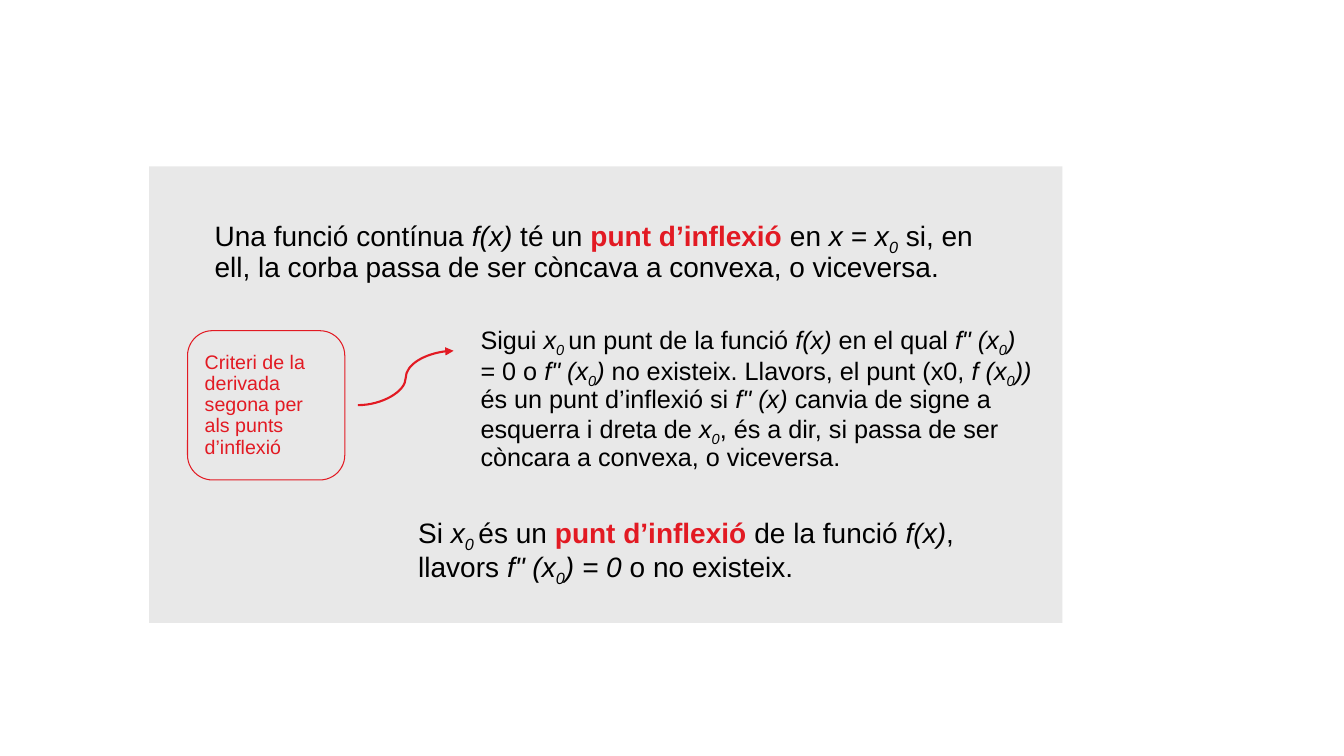
from lxml.etree import SubElement as Sub
from pptx import Presentation as Deck
from pptx.dml.color import RGBColor as Rgb
from pptx.enum.shapes import MSO_CONNECTOR as Link, MSO_SHAPE as Form
from pptx.enum.text import MSO_ANCHOR as Anchor, PP_ALIGN as Align
from pptx.oxml.ns import qn
from pptx.util import Pt

COLORS = {"panel": "E5E5E5", "red": "E21A23", "ink": "000000"}
FONT = "Arial"

RULE = [
    ("Una funció contínua ", ""), ("f(x)", "i"), (" té un ", ""),
    ("punt d’inflexió ", "key"), ("en ", ""), ("x = x", "i"), ("0", "sub"),
    (" si, en ell, la corba passa de ser còncava a convexa, o viceversa.", ""),
]
TEST = [
    ("Sigui ", ""), ("x", "i"), ("0 ", "sub"), ("un punt de la funció ", ""),
    ("f(x)", "i"), (" en el qual ", ""), ('f" (x', "i"), ("0", "sub"),
    (") ", "i"), ("= 0 o ", ""), ('f" (x', "i"), ("0", "sub"), (") ", "i"),
    ("no existeix. Llavors, el punt (x0, ", ""), ("f (x", "i"), ("0", "sub"),
    (")) ", "i"), ("és un punt d’inflexió si ", ""), ('f" (x) ', "i"),
    ("canvia de signe a esquerra i dreta de ", ""), ("x", "i"), ("0", "sub"),
    (", és a dir, si passa de ser còncara a convexa, o viceversa.", ""),
]
RESULT = [
    ("Si ", ""), ("x", "i"), ("0 ", "sub"), ("és un ", ""),
    ("punt d’inflexió ", "key"), ("de la funció ", ""), ("f(x)", "i"),
    (", llavors ", ""), ('f" (x', "i"), ("0", "sub"), (") = 0 ", "i"),
    ("o no existeix.", ""),
]
LABEL = [("Criteri de la derivada segona per als punts d’inflexió", "red")]


def color(name):
    return Rgb.from_string(COLORS[name])


def write(frame, parts, size):
    frame.word_wrap = True
    para = frame.paragraphs[0]
    para.alignment = Align.LEFT
    para.line_spacing = 0.9
    para.space_before = Pt(0)
    para.space_after = Pt(6)
    for text, style in parts:
        run = para.add_run()
        run.text = text
        font = run.font
        font.name = FONT
        font.size = Pt(size)
        font.bold = style == "key"
        font.italic = style in ("i", "sub")
        font.color.rgb = color("red" if style in ("key", "red") else "ink")
        if style == "sub":
            run._r.get_or_add_rPr().set("baseline", "-25000")


def add_text(slide, box, parts, size):
    shape = slide.shapes.add_textbox(*map(Pt, box))
    write(shape.text_frame, parts, size)


def add_panel(slide, box):
    shape = slide.shapes.add_shape(Form.RECTANGLE, *map(Pt, box))
    shape.shadow.inherit = False
    shape.fill.solid()
    shape.fill.fore_color.rgb = color("panel")
    tint = shape.fill._xPr.find(".//" + qn("a:srgbClr"))
    Sub(tint, qn("a:alpha"), val="85000")
    shape.line.fill.background()


def add_label(slide, box, parts, size):
    shape = slide.shapes.add_shape(Form.ROUNDED_RECTANGLE, *map(Pt, box))
    shape.shadow.inherit = False
    shape.fill.background()
    shape.line.color.rgb = color("red")
    shape.line.width = Pt(0.75)
    shape.text_frame.vertical_anchor = Anchor.MIDDLE
    write(shape.text_frame, parts, size)


def add_arrow(slide, ends):
    arrow = slide.shapes.add_connector(Link.CURVE, *map(Pt, ends))
    arrow.line.color.rgb = color("red")
    arrow.line.width = Pt(1.5)
    Sub(arrow.line._get_or_add_ln(), qn("a:tailEnd"), type="triangle")
    Sub(arrow._element.spPr, qn("a:effectLst"))


def main():
    deck = Deck()
    deck.slide_width = Pt(960)
    deck.slide_height = Pt(540)
    slide = deck.slides.add_slide(deck.slide_layouts[6])
    add_panel(slide, (106.6, 118.8, 652.3, 326.2))
    add_text(slide, (146.2, 152.6, 569.5, 44.6), RULE, 20)
    add_label(slide, (134, 236.2, 112.3, 106.6), LABEL, 14)
    add_text(slide, (336.2, 228.2, 408.2, 115.2), TEST, 18)
    add_text(slide, (291.6, 365, 452.9, 44.6), RESULT, 20)
    add_arrow(slide, (255.6, 289.4, 324, 250.6))
    deck.save("out.pptx")


if __name__ == "__main__":
    main()
